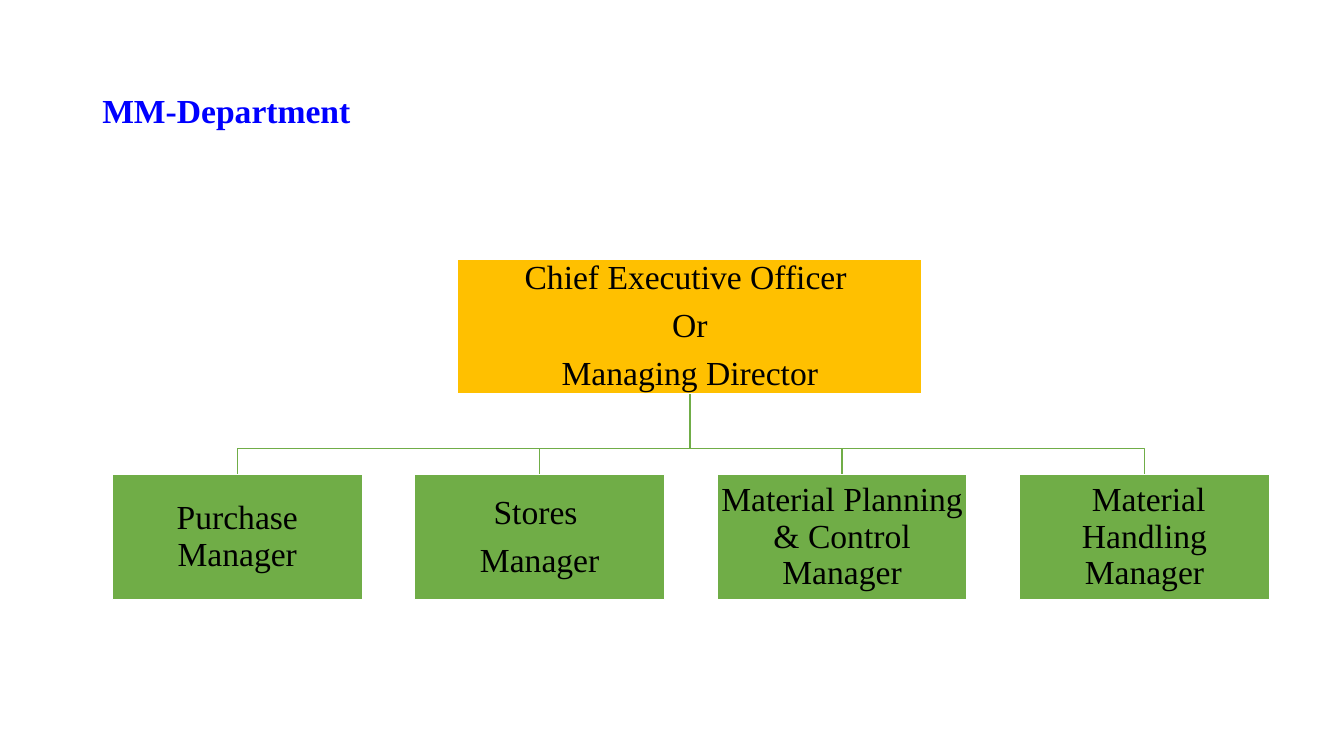
from pptx import Presentation
from pptx.dml.color import RGBColor
from pptx.enum.shapes import MSO_SHAPE
from pptx.enum.text import MSO_ANCHOR, PP_ALIGN
from pptx.util import Pt

PX = 9525
BLUE = RGBColor(0x00, 0x00, 0xFF)
GREEN = RGBColor(0x70, 0xAD, 0x47)
GOLD = RGBColor(0xFF, 0xC0, 0x00)
BLACK = RGBColor(0x00, 0x00, 0x00)
WHITE = RGBColor(0xFF, 0xFF, 0xFF)


class Chart:
    font = "Times New Roman"
    size = Pt(24)
    edge = Pt(1)

    def __init__(self, slide):
        self.shapes = slide.shapes

    def label(self, frame, text, color, align, bold=False, after=0):
        frame.word_wrap = True
        frame.vertical_anchor = MSO_ANCHOR.MIDDLE
        frame.text = text
        for para in frame.paragraphs:
            para.alignment = align
            para.line_spacing = 0.9
            para.space_after = Pt(after)
            for run in para.runs:
                run.font.name = self.font
                run.font.size = self.size
                run.font.bold = bold
                run.font.color.rgb = color

    def title(self, text, *area):
        box = self.shapes.add_textbox(*[n * PX for n in area])
        self.label(box.text_frame, text, BLUE, PP_ALIGN.LEFT, bold=True)

    def box(self, text, fill, *area):
        rect = self.shapes.add_shape(MSO_SHAPE.RECTANGLE, *[n * PX for n in area])
        rect.shadow.inherit = False
        rect.fill.solid()
        rect.fill.fore_color.rgb = fill
        rect.line.color.rgb = WHITE
        rect.line.width = self.edge
        frame = rect.text_frame
        frame.margin_left = frame.margin_right = 2 * PX
        frame.margin_top = frame.margin_bottom = 2 * PX
        self.label(frame, text, BLACK, PP_ALIGN.CENTER, after=8.4)

    def link(self, start, *rest):
        route = self.shapes.build_freeform(*start, scale=PX)
        route.add_line_segments(rest, close=False)
        line = route.convert_to_shape()
        line.shadow.inherit = False
        line.fill.background()
        line.line.color.rgb = GREEN
        line.line.width = self.edge


def main():
    deck = Presentation()
    deck.slide_width = 1280 * PX
    deck.slide_height = 720 * PX
    chart = Chart(deck.slides.add_slide(deck.slide_layouts[6]))
    chart.title("MM-Department", 88, 38, 1104, 139)

    staff = [
        "Purchase Manager",
        "Stores \nManager",
        "Material Planning & Control Manager",
        " Material Handling Manager",
    ]
    left, step, top, wide, high = 107, 288, 452, 238, 119
    mid, base, bend = 657, 375, 427
    spots = [left + step * i for i in range(len(staff))]

    for x in reversed(spots):
        end = x + wide // 2
        chart.link((mid, base), (mid, bend), (end, bend), (end, top))
    chart.box("Chief Executive Officer \nOr\nManaging Director", GOLD, 436, 247, 442, 128)
    for x, text in zip(spots, staff):
        chart.box(text, GREEN, x, top, wide, high)

    deck.save("out.pptx")


if __name__ == "__main__":
    main()
